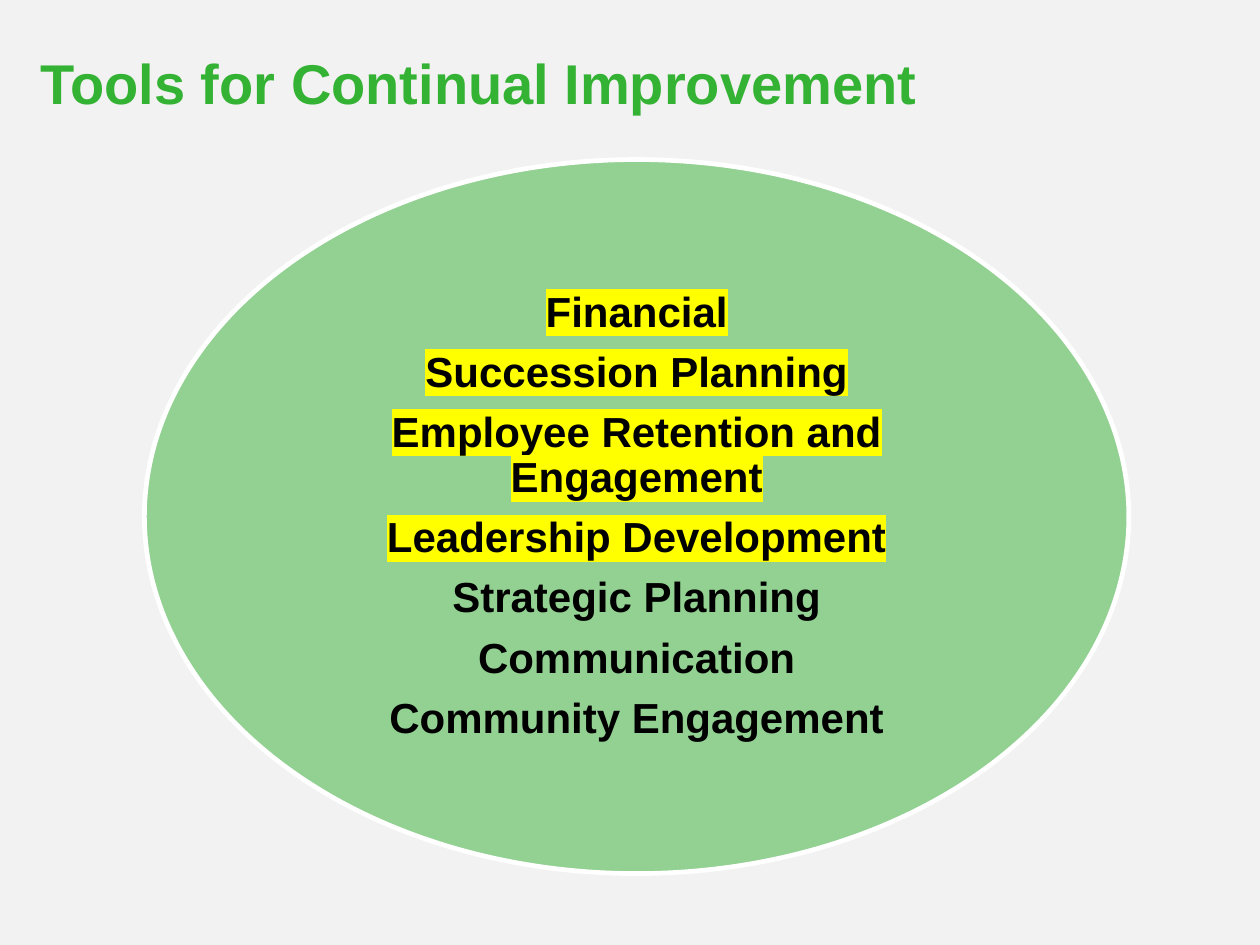
from dataclasses import dataclass

from lxml import etree
from pptx import Presentation
from pptx.dml.color import RGBColor
from pptx.enum.shapes import MSO_SHAPE
from pptx.enum.text import MSO_ANCHOR, PP_ALIGN
from pptx.oxml.ns import qn
from pptx.util import Inches, Pt

OVAL = MSO_SHAPE.OVAL
MIDDLE = MSO_ANCHOR.MIDDLE
LEFT, CENTER = PP_ALIGN.LEFT, PP_ALIGN.CENTER
TITLE_ONLY = 5


@dataclass(frozen=True)
class Theme:
    font: str = "Arial"
    title_size: int = 24
    tool_size: int = 18
    background: str = "F2F2F2"
    green: str = "34B233"
    outline: str = "FFFFFF"
    text: str = "000000"
    highlight: str = "FFFF00"


THEME = Theme()
TOOLS = [
    ("Financial", True),
    ("Succession Planning", True),
    ("Employee Retention and Engagement", True),
    ("Leadership Development", True),
    ("Strategic Planning", False),
    ("Communication", False),
    ("Community Engagement", False),
]


def color(value):
    return RGBColor.from_string(value)


def style_font(para, size, value):
    para.font.name = THEME.font
    para.font.size = Pt(size)
    para.font.bold = True
    para.font.color.rgb = color(value)


def highlight(span):
    mark = etree.SubElement(span.font._element, qn("a:highlight"))
    etree.SubElement(mark, qn("a:srgbClr"), val=THEME.highlight)


def add_title(page, text, left, top, width, height):
    title = page.shapes.title
    title.left, title.top = Inches(left), Inches(top)
    title.width, title.height = Inches(width), Inches(height)
    frame = title.text_frame
    frame.text = text
    frame.vertical_anchor = MIDDLE
    para = frame.paragraphs[0]
    para.alignment = LEFT
    style_font(para, THEME.title_size, THEME.green)


def add_tool_oval(page, tools, left, top, width, height):
    """Draw a half-transparent oval with the tools listed at its centre."""
    oval = page.shapes.add_shape(
        OVAL, Inches(left), Inches(top), Inches(width), Inches(height))
    oval.shadow.inherit = False
    oval.fill.solid()
    oval.fill.fore_color.rgb = color(THEME.green)
    fill_color = oval._element.spPr.find(".//" + qn("a:srgbClr"))
    etree.SubElement(fill_color, qn("a:alpha"), val="50000")
    oval.line.color.rgb = color(THEME.outline)
    oval.line.width = Pt(2)

    # The text box is the rectangle inscribed in the oval.
    scale = 0.5 ** 0.5
    inset = (1 - scale) / 2
    box = page.shapes.add_textbox(
        Inches(left + width * inset), Inches(top + height * inset),
        Inches(width * scale), Inches(height * scale))
    frame = box.text_frame
    frame.word_wrap = True
    frame.vertical_anchor = MIDDLE
    frame.margin_left = frame.margin_right = Inches(0.07)
    frame.margin_top = frame.margin_bottom = Inches(0.07)
    for index, (name, marked) in enumerate(tools):
        para = frame.add_paragraph() if index else frame.paragraphs[0]
        span = para.add_run()
        span.text = name
        if marked:
            highlight(span)
        para.alignment = CENTER
        para.line_spacing = 0.9
        para.space_after = Pt(THEME.tool_size * 0.35)
        style_font(para, THEME.tool_size, THEME.text)


def main():
    deck = Presentation()
    deck.slide_width = Inches(7.5)
    deck.slide_height = deck.slide_width * 3 // 4
    page = deck.slides.add_slide(deck.slide_layouts[TITLE_ONLY])
    page.background.fill.solid()
    page.background.fill.fore_color.rgb = color(THEME.background)
    add_title(page, "Tools for Continual Improvement", 0.14, 0.15, 5.48, 0.68)
    add_tool_oval(page, TOOLS, 0.86, 0.95, 5.86, 4.25)
    deck.save("out.pptx")


if __name__ == "__main__":
    main()
